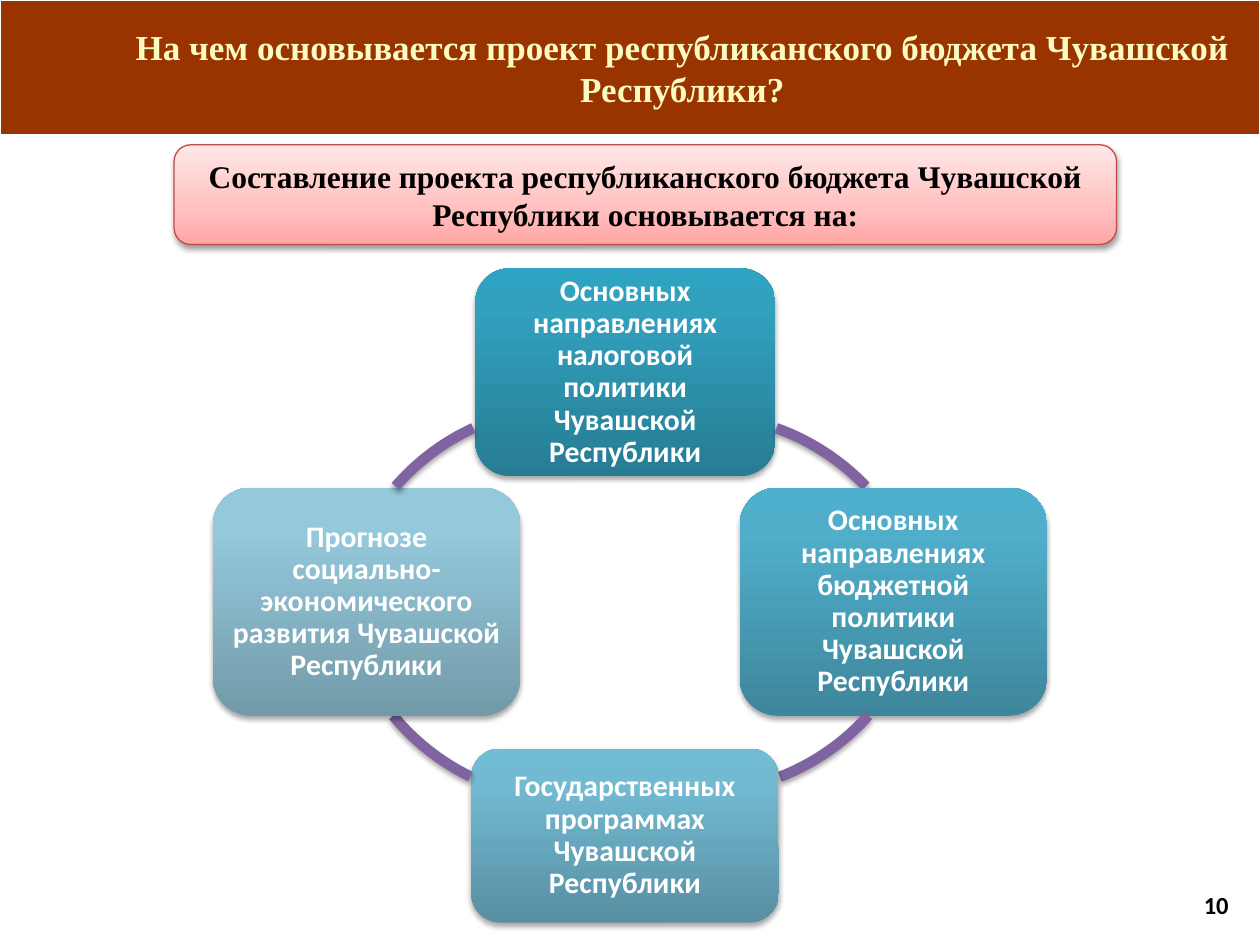
from typing import NamedTuple

from lxml.etree import SubElement
from pptx import Presentation
from pptx.dml.color import RGBColor
from pptx.enum.shapes import MSO_SHAPE as Shp
from pptx.enum.text import MSO_ANCHOR as Anchor, MSO_AUTO_SIZE as AutoSize, PP_ALIGN as Align
from pptx.oxml.ns import qn
from pptx.util import Cm, Pt

SERIF, SANS = "Times New Roman", "Calibri"
ARC_SIZE = 9.35


class Box(NamedTuple):
    x: float
    y: float
    w: float
    h: float

    def cm(self) -> list:
        return [Cm(v) for v in self]


class Card(NamedTuple):
    text: str
    box: Box
    stops: list


class Arc(NamedTuple):
    x: float
    y: float
    start: float
    end: float


CARDS = [
    Card("Основных направлениях налоговой политики Чувашской Республики",
         Box(9.58, 5.41, 6.05, 4.19), [(0, "267C93"), (80, "32A1BE"), (100, "2FA3C2")]),
    Card("Основных направлениях бюджетной политики Чувашской Республики",
         Box(14.91, 9.83, 6.2, 4.6), [(0, "3E869C"), (80, "50AECA"), (100, "4EB0CD")]),
    Card("Государственных программах Чувашской Республики",
         Box(9.5, 15.09, 6.2, 3.51), [(0, "588FA2"), (80, "72BAD2"), (100, "71BCD5")]),
    Card("Прогнозе социально-экономического развития Чувашской Республики",
         Box(4.29, 9.83, 6.2, 4.6), [(0, "729AA8"), (80, "94C8DB"), (100, "93C9DD")]),
]
ARCS = [
    Arc(9.4, 8.36, 289.7, 316.3),
    Arc(9.35, 6.63, 41.9, 68.7),
    Arc(6.86, 6.78, 116, 140.5),
    Arc(6.83, 8.2, 221, 245.2),
]


def rgb(value: str) -> RGBColor:
    return RGBColor.from_string(value)


def set_gradient(shape, stops: list) -> None:
    shape.fill.gradient()
    shape.fill.gradient_angle = 90
    gs_list = shape.element.spPr.find(".//" + qn("a:gsLst"))
    for gs in list(gs_list):
        gs_list.remove(gs)
    for pos, color in stops:
        gs = SubElement(gs_list, qn("a:gs"), pos=str(pos * 1000))
        SubElement(gs, qn("a:srgbClr"), val=color)


def set_shadow(shape, dist: float, alpha: int) -> None:
    shape.shadow.inherit = False
    effects = shape.element.spPr.find(qn("a:effectLst"))
    shadow = SubElement(effects, qn("a:outerShdw"), blurRad=str(Pt(3.1)),
                        dist=str(Pt(dist)), dir="5400000", rotWithShape="0")
    color = SubElement(shadow, qn("a:srgbClr"), val="000000")
    SubElement(color, qn("a:alpha"), val=str(alpha * 1000))


def set_line(shape, color: str, width: float) -> None:
    shape.line.color.rgb = rgb(color)
    shape.line.width = Pt(width)


def set_text(shape, text: str, size: int, font: str, color: str,
             align: Align = Align.CENTER):
    tf = shape.text_frame
    tf.text = text
    tf.word_wrap = True
    tf.auto_size = AutoSize.NONE
    tf.vertical_anchor = Anchor.MIDDLE
    p = tf.paragraphs[0]
    p.alignment = align
    f = p.runs[0].font
    f.size, f.name, f.bold = Pt(size), font, True
    f.color.rgb = rgb(color)
    return tf


def set_insets(tf, inset: float) -> None:
    tf.margin_left = tf.margin_right = tf.margin_top = tf.margin_bottom = Cm(inset)


def add_header(s, text: str) -> None:
    header = s.shapes.add_shape(Shp.RECTANGLE, *Box(0, 0, 25.4, 2.72).cm())
    header.fill.solid()
    header.fill.fore_color.rgb = rgb("993300")
    set_line(header, "FFFFFF", 0.75)
    header.shadow.inherit = False
    title = s.shapes.title
    s.shapes.element.append(title.element)
    title.left, title.top, title.width, title.height = Box(2.11, 0, 23.29, 2.72).cm()
    set_text(title, text, 20, SERIF, "FBFBC1")


def add_card(s, card: Card) -> None:
    sp = s.shapes.add_shape(Shp.ROUNDED_RECTANGLE, *card.box.cm())
    set_gradient(sp, card.stops)
    sp.line.fill.background()
    set_shadow(sp, 1.8, 35)
    tf = set_text(sp, card.text, 17, SANS, "FFFFFF")
    set_insets(tf, 0.18)
    tf.paragraphs[0].line_spacing = 0.9


def add_arc(s, arc: Arc) -> None:
    sp = s.shapes.add_shape(Shp.ARC, *Box(arc.x, arc.y, ARC_SIZE, ARC_SIZE).cm())
    for i, degrees in enumerate((arc.start, arc.end)):
        sp.adjustments[i] = degrees * 0.6
    sp.fill.background()
    set_line(sp, "8064A2", 6)
    set_shadow(sp, 1.8, 35)


def add_banner(s, text: str) -> None:
    sp = s.shapes.add_shape(Shp.ROUNDED_RECTANGLE, *Box(3.51, 2.92, 19, 2.01).cm())
    set_gradient(sp, [(0, "FFA6A5"), (35, "FFC0BF"), (100, "FFE7E7")])
    set_line(sp, "BF4C48", 0.75)
    set_shadow(sp, 1.6, 38)
    set_insets(set_text(sp, text, 18, SERIF, "000000"), 0)


def main() -> None:
    prs = Presentation()
    prs.slide_width, prs.slide_height = Cm(25.4), Cm(19.05)
    s = prs.slides.add_slide(prs.slide_layouts[5])
    add_header(s, "На чем основывается проект республиканского бюджета Чувашской Республики?")
    for card, arc in zip(CARDS, ARCS):
        add_card(s, card)
        add_arc(s, arc)
    add_banner(s, "Составление проекта республиканского бюджета Чувашской "
                  "Республики основывается на:")
    number = s.shapes.add_textbox(*Box(22.1, 17.73, 2.92, 1.02).cm())
    set_text(number, "10", 14, SANS, "000000", Align.RIGHT)
    prs.save("out.pptx")


if __name__ == "__main__":
    main()
